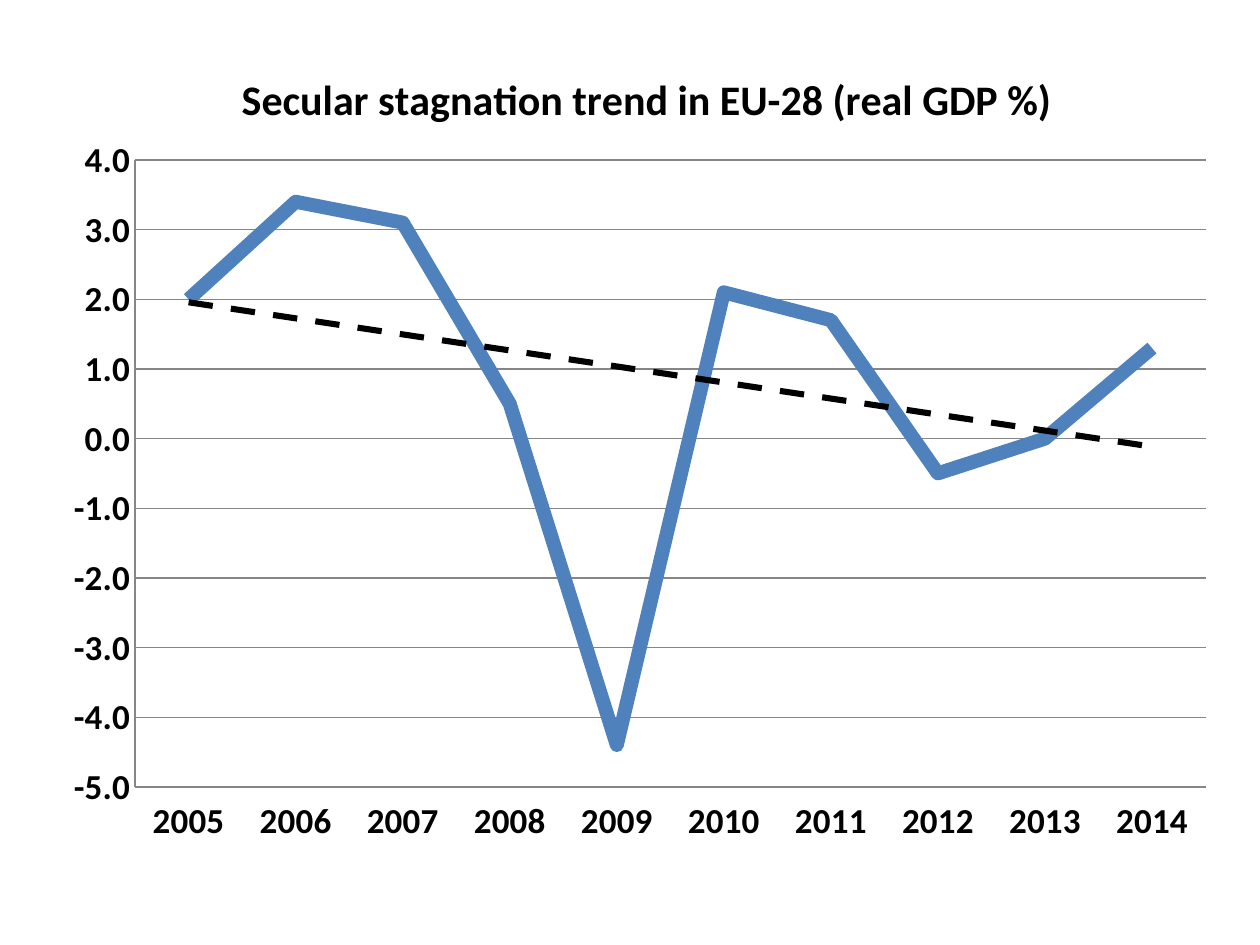
import dataclasses

import lxml.etree
import pptx
import pptx.chart.data
import pptx.dml.color
import pptx.enum.chart
import pptx.enum.dml
import pptx.oxml
import pptx.oxml.ns
import pptx.util

EMU_PER_PX = 914400 // 126


@dataclasses.dataclass(frozen=True)
class Theme:
    font: str = "Calibri"
    text: str = "000000"
    series: str = "4F81BD"
    grid: str = "868686"
    title_size: int = 24
    label_size: int = 20
    series_width: float = 8
    trend_width: float = 3.5
    grid_width: float = 0.75


@dataclasses.dataclass(frozen=True)
class Box:
    left: int
    top: int
    width: int
    height: int


THEME = Theme()
CHART = Box(49, 34, 1179, 824)
PLOT = Box(135, 160, 1071, 627)
TITLE = Box(234, 64, 0, 0)  # a chart title takes only a position
TITLE_TEXT = "Secular stagnation trend in EU-28 (real GDP %)"
YEARS = [str(year) for year in range(2005, 2015)]
GROWTH = (2, 3.4, 3.1, 0.5, -4.4, 2.1, 1.7, -0.5, 0, 1.3)


def px(length: int) -> int:
    return length * EMU_PER_PX


def format_font(font, *, size: int, color: str = THEME.text) -> None:
    font.name = THEME.font
    font.size = pptx.util.Pt(size)
    font.bold = True
    font.color.rgb = pptx.dml.color.RGBColor.from_string(color)


def format_line(line, *, color: str, width: float) -> None:
    line.color.rgb = pptx.dml.color.RGBColor.from_string(color)
    line.width = pptx.util.Pt(width)


def write_title(chart, text: str, *, size: int) -> None:
    chart.has_title = True
    span = chart.chart_title.text_frame.paragraphs[0].add_run()
    span.text = text
    format_font(span.font, size=size)


def place(parent, box: Box, *, index: int, inner: bool = False) -> None:
    """Give a chart part a fixed place, as fractions of the chart."""
    for old in parent.findall(pptx.oxml.ns.qn("c:layout")):
        parent.remove(old)
    values = {"xMode": "edge", "yMode": "edge",
              "x": round((box.left - CHART.left) / CHART.width, 3),
              "y": round((box.top - CHART.top) / CHART.height, 3)}
    if inner:
        values = {"layoutTarget": "inner", **values,
                  "w": round(box.width / CHART.width, 3),
                  "h": round(box.height / CHART.height, 3)}
    layout = lxml.etree.Element(pptx.oxml.ns.qn("c:layout"))
    manual = lxml.etree.SubElement(layout, pptx.oxml.ns.qn("c:manualLayout"))
    for name, value in values.items():
        lxml.etree.SubElement(manual, pptx.oxml.ns.qn(f"c:{name}"), val=str(value))
    parent.insert(index, layout)


def add_trend(series, *, color: str, width: float) -> None:
    trend = pptx.oxml.parse_xml(
        f'<c:trendline {pptx.oxml.ns.nsdecls("c", "a")}><c:spPr>'
        f'<a:ln w="{pptx.util.Pt(width)}"><a:solidFill><a:srgbClr val="{color}"/>'
        '</a:solidFill><a:prstDash val="dash"/></a:ln></c:spPr>'
        '<c:trendlineType val="linear"/><c:dispRSqr val="0"/><c:dispEq val="0"/>'
        '</c:trendline>')
    series._element.find(pptx.oxml.ns.qn("c:cat")).addprevious(trend)


def format_axes(chart) -> None:
    years, growth = chart.category_axis, chart.value_axis
    for axis in (years, growth):
        axis.major_tick_mark = pptx.enum.chart.XL_TICK_MARK.NONE
        axis.minor_tick_mark = pptx.enum.chart.XL_TICK_MARK.NONE
        format_line(axis.format.line, color=THEME.grid, width=THEME.grid_width)
        format_font(axis.tick_labels.font, size=THEME.label_size)
    years.tick_label_position = pptx.enum.chart.XL_TICK_LABEL_POSITION.LOW
    growth.minimum_scale, growth.maximum_scale, growth.major_unit = -5, 4, 1
    growth.tick_labels.number_format = "#,##0.0"
    growth.tick_labels.number_format_is_linked = False
    growth.has_major_gridlines = True
    format_line(growth.major_gridlines.format.line,
                color=THEME.grid, width=THEME.grid_width)


def add_growth_chart(page) -> None:
    data = pptx.chart.data.CategoryChartData()
    data.categories = YEARS
    data.add_series("Series 1", GROWTH)
    chart = page.shapes.add_chart(
        pptx.enum.chart.XL_CHART_TYPE.LINE, px(CHART.left), px(CHART.top),
        px(CHART.width), px(CHART.height), data).chart
    chart.has_legend = False
    format_font(chart.font, size=THEME.label_size)

    # Title and plot area
    write_title(chart, TITLE_TEXT, size=THEME.title_size)
    chart.chart_title.include_in_layout = False
    place(chart.chart_title._element, TITLE, index=1)
    plot_area = chart._chartSpace.find(".//" + pptx.oxml.ns.qn("c:plotArea"))
    place(plot_area, PLOT, index=0, inner=True)
    format_axes(chart)

    # Growth line and its linear trend
    plot = chart.plots[0]
    plot.vary_by_categories = False
    series = plot.series[0]
    series.smooth = False
    series.marker.style = pptx.enum.chart.XL_MARKER_STYLE.NONE
    format_line(series.format.line, color=THEME.series, width=THEME.series_width)
    add_trend(series, color=THEME.text, width=THEME.trend_width)


def main() -> None:
    deck = pptx.Presentation()
    deck.slide_width, deck.slide_height = px(1260), px(945)
    page = deck.slides.add_slide(deck.slide_layouts[6])
    add_growth_chart(page)
    deck.save("out.pptx")


if __name__ == "__main__":
    main()
